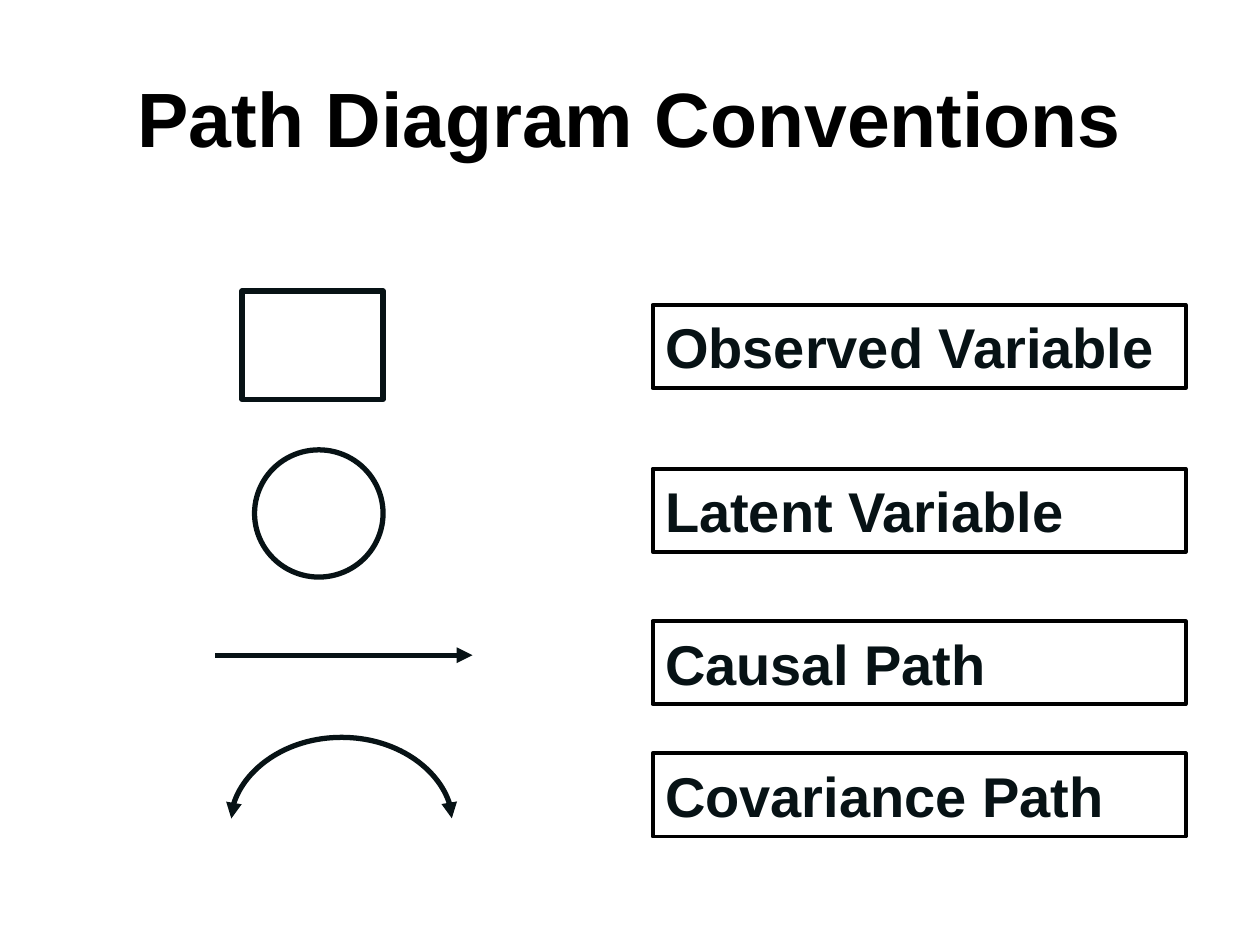
from typing import NamedTuple

from lxml import etree
from pptx import Presentation
from pptx import util as u
from pptx.dml.color import RGBColor
from pptx.enum import shapes, text
from pptx.oxml.ns import qn

BLACK = RGBColor(0x00, 0x00, 0x00)
INK = RGBColor(0x07, 0x12, 0x15)
FONT = "Arial"


class Label(NamedTuple):
    caption: str
    top: float


class Symbol(NamedTuple):
    kind: shapes.MSO_SHAPE
    left: float
    top: float
    width: float
    height: float


LABELS = [
    Label("Observed Variable", 2.42),
    Label("Latent Variable", 3.72),
    Label("Causal Path", 4.93),
    Label("Covariance Path", 5.98),
]
SYMBOLS = [
    Symbol(shapes.MSO_SHAPE.OVAL, 2.02, 3.57, 1.02, 1.01),
    Symbol(shapes.MSO_SHAPE.RECTANGLE, 1.92, 2.31, 1.12, 0.86),
]


def set_font(para, size: float, color: RGBColor) -> None:
    para.font.name = FONT
    para.font.size = u.Pt(size)
    para.font.bold = True
    para.font.color.rgb = color


def add_outline(slide, symbol: Symbol, color: RGBColor, weight: float):
    """Add an unfilled preset shape."""
    shape = slide.shapes.add_shape(
        symbol.kind, u.Inches(symbol.left), u.Inches(symbol.top),
        u.Inches(symbol.width), u.Inches(symbol.height))
    shape.shadow.inherit = False
    shape.fill.background()
    shape.line.color.rgb = color
    shape.line.width = u.Pt(weight)
    return shape


def add_label(slide, label: Label) -> None:
    box = add_outline(
        slide, Symbol(shapes.MSO_SHAPE.RECTANGLE, 5.18, label.top, 4.23, 0.66),
        BLACK, 2.25)
    frame = box.text_frame
    frame.word_wrap = True
    frame.vertical_anchor = text.MSO_ANCHOR.MIDDLE
    para = frame.paragraphs[0]
    para.text = label.caption
    para.alignment = text.PP_ALIGN.LEFT
    set_font(para, 32, INK)


def style_path(connector, *ends: str) -> None:
    """Set the stroke and put a triangle on each named end."""
    connector.line.color.rgb = INK
    connector.line.width = u.Pt(3)
    line = connector.line._get_or_add_ln()
    for end in ends:
        etree.SubElement(line, qn(f"a:{end}"), type="triangle")
    etree.SubElement(connector._element.spPr, qn("a:effectLst"))


def add_causal_path(slide) -> None:
    arrow = slide.shapes.add_connector(
        shapes.MSO_CONNECTOR.STRAIGHT,
        u.Inches(1.71), u.Inches(5.2), u.Inches(3.75), u.Inches(5.2))
    style_path(arrow, "tailEnd")


def add_covariance_path(slide) -> None:
    """Turn a thin curved connector upright so that it bulges upwards."""
    left, top, span, rise = (u.Inches(n) for n in (2.71, 5.62, 1.75, 0.71))
    thickness = u.Pt(0.125)
    curve = slide.shapes.add_connector(
        shapes.MSO_CONNECTOR.CURVE, left, top, left + thickness, top + span)
    properties = curve._element.spPr
    properties.find(qn("a:xfrm")).set("rot", str(270 * 60000))
    geometry = properties.find(qn("a:prstGeom"))
    adjustments = geometry.find(qn("a:avLst"))
    if adjustments is None:
        adjustments = etree.SubElement(geometry, qn("a:avLst"))
    bulge = round(rise / thickness * 100000)
    etree.SubElement(adjustments, qn("a:gd"), name="adj1", fmla=f"val {bulge}")
    style_path(curve, "headEnd", "tailEnd")


def add_title(slide, caption: str) -> None:
    title = slide.shapes.title
    title.left, title.top = u.Inches(0.5), u.Inches(0.3)
    title.width, title.height = u.Inches(9), u.Inches(1.25)
    title.text_frame.vertical_anchor = text.MSO_ANCHOR.MIDDLE
    para = title.text_frame.paragraphs[0]
    para.text = caption
    para.alignment = text.PP_ALIGN.CENTER
    set_font(para, 44, BLACK)


def main() -> None:
    deck = Presentation()
    deck.slide_width, deck.slide_height = u.Inches(10), u.Inches(7.5)
    slide = deck.slides.add_slide(deck.slide_layouts.get_by_name("Title Only"))
    add_title(slide, "Path Diagram Conventions")
    for label in LABELS:
        add_label(slide, label)
    for symbol in SYMBOLS:
        add_outline(slide, symbol, INK, 3)
    add_causal_path(slide)
    add_covariance_path(slide)
    deck.save("out.pptx")


if __name__ == "__main__":
    main()
